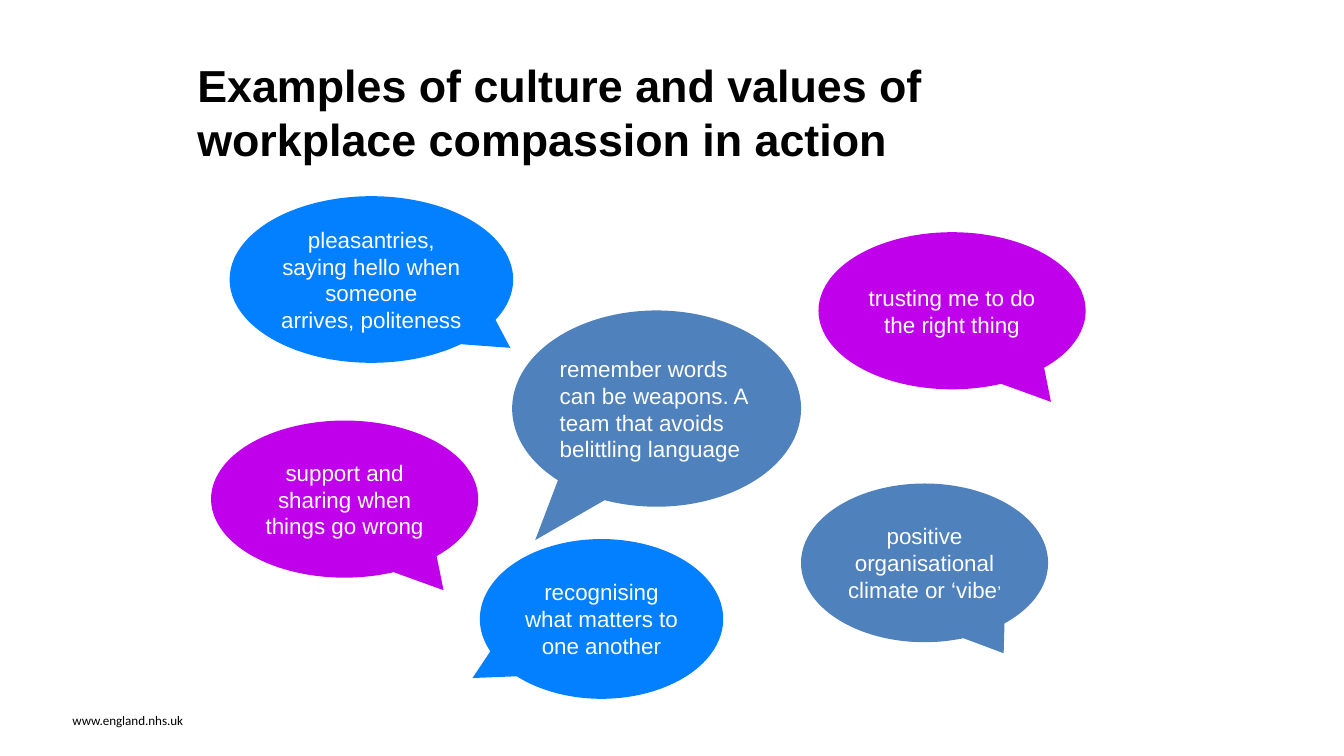
from pptx import Presentation
from pptx.dml.color import RGBColor
from pptx.enum.shapes import MSO_SHAPE
from pptx.enum.text import MSO_ANCHOR, PP_ALIGN
from pptx.util import Cm, Pt

CALLOUT = MSO_SHAPE.OVAL_CALLOUT
TOP, MIDDLE = MSO_ANCHOR.TOP, MSO_ANCHOR.MIDDLE
LEFT, CENTER = PP_ALIGN.LEFT, PP_ALIGN.CENTER

BLUE, PURPLE, STEEL = "0280FF", "C100EB", "4F81BD"
BLACK, WHITE = "000000", "FEFEFE"
INSET = Cm(0.1)

TITLE = "Examples of culture and values of workplace compassion in action"
FOOTER = "www.england.nhs.uk"

# Place (left, top, width, height in cm), tail tip (share of width and height
# from the centre), fill, alignment, paragraphs of (text, size) runs
BUBBLES = [
    ((4.34, 3.71, 5.36, 3.15), (0.49, 0.41), BLUE, CENTER,
     [[("pleasantries, saying hello when someone", 12)],
      [("arrives, politeness", 12)]]),
    ((3.99, 7.95, 5.05, 2.97), (0.37, 0.58), PURPLE, CENTER,
     [[("support and sharing when things go wrong", 12)]]),
    ((15.14, 9.14, 4.67, 3), (0.32, 0.57), STEEL, CENTER,
     [[("positive organisational climate or ‘vibe", 12), ("’", 9)]]),
    ((9.07, 10.19, 4.6, 3.02), (-0.53, 0.37), BLUE, CENTER,
     [[("recognising what matters to one another", 12)]]),
    ((9.68, 5.87, 5.46, 3.71), (-0.42, 0.67), STEEL, LEFT,
     [[("remember words can be weapons. A team that avoids belittling language",
        12)]]),
    ((15.47, 4.39, 5.05, 2.97), (0.37, 0.58), PURPLE, CENTER,
     [[("trusting me to do the right thing", 12)]]),
]


def rgb(color):
    return RGBColor.from_string(color)


def write(shape, paragraphs, color, align=LEFT, anchor=MIDDLE, font="Arial",
          bold=False):
    frame = shape.text_frame
    frame.word_wrap = True
    frame.vertical_anchor = anchor
    frame.margin_left = frame.margin_right = INSET
    frame.margin_top = frame.margin_bottom = INSET
    for index, spans in enumerate(paragraphs):
        para = frame.add_paragraph() if index else frame.paragraphs[0]
        para.alignment = align
        for text, size in spans:
            span = para.add_run()
            span.text = text
            span.font.name = font
            span.font.size = Pt(size)
            span.font.bold = bold
            span.font.color.rgb = rgb(color)


def add_bubble(page, place, tip, fill, align, paragraphs):
    bubble = page.shapes.add_shape(CALLOUT, *map(Cm, place))
    bubble.shadow.inherit = False
    bubble.adjustments[0], bubble.adjustments[1] = tip
    bubble.fill.solid()
    bubble.fill.fore_color.rgb = rgb(fill)
    bubble.line.fill.background()
    write(bubble, paragraphs, WHITE, align)


deck = Presentation()
deck.slide_width, deck.slide_height = Cm(25.4), Cm(14.29)
page = deck.slides.add_slide(deck.slide_layouts[6])

footer = page.shapes.add_textbox(Cm(1.27), Cm(13.36), Cm(5.92), Cm(0.51))
write(footer, [[(FOOTER, 7)]], BLACK, font="Calibri")

title = page.shapes.add_textbox(Cm(3.63), Cm(0.99), Cm(16.21), Cm(3))
write(title, [[(TITLE, 24)]], BLACK, anchor=TOP, bold=True)

for bubble in BUBBLES:
    add_bubble(page, *bubble)

deck.save("out.pptx")
